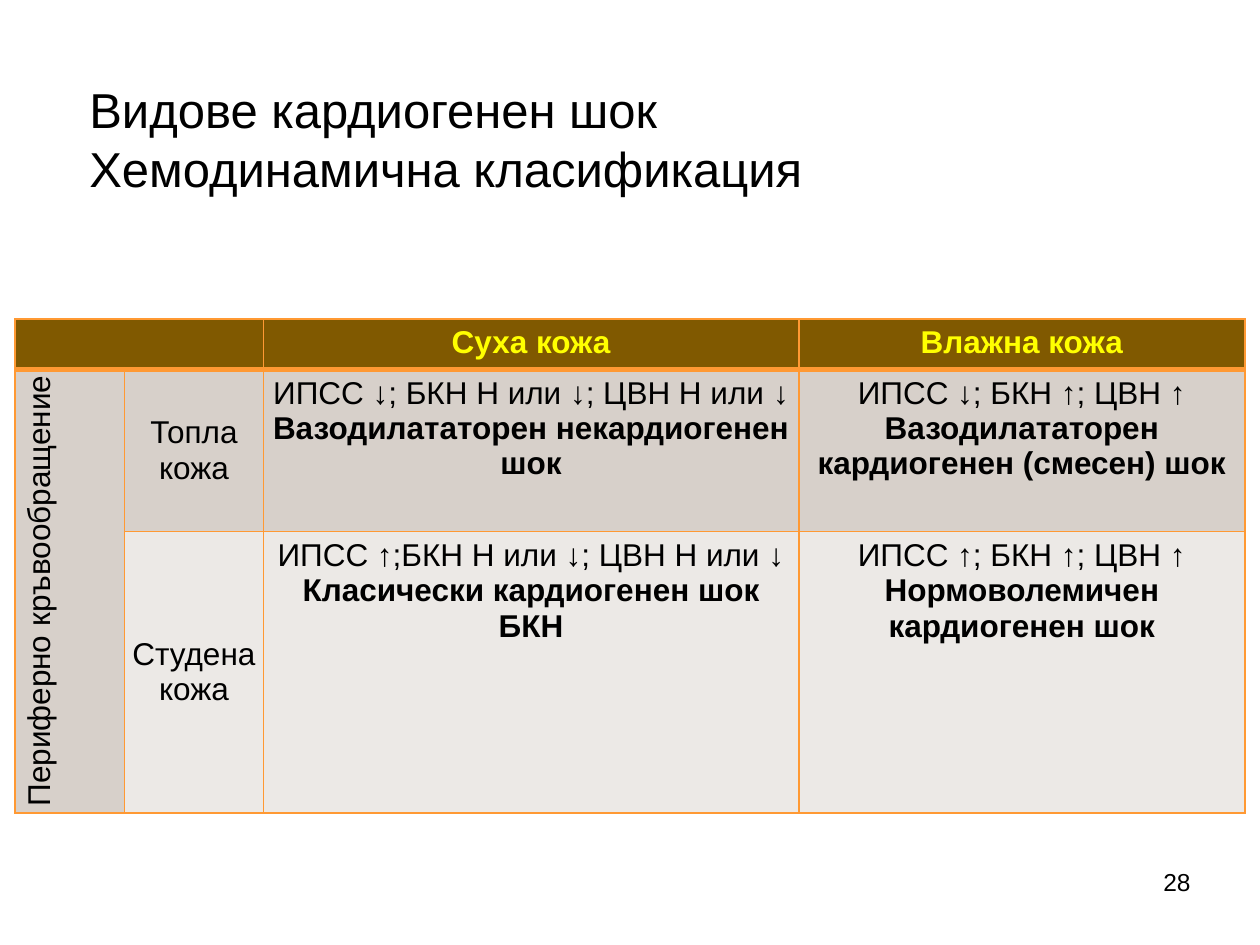
from lxml.etree import SubElement
from pptx import Presentation
from pptx.dml.color import RGBColor
from pptx.enum.text import MSO_ANCHOR as Anchor, PP_ALIGN as Align
from pptx.oxml.ns import qn
from pptx.util import Inches, Pt

BLACK = RGBColor(0x00, 0x00, 0x00)
YELLOW = RGBColor(0xFF, 0xFF, 0x00)
ORANGE = RGBColor(0xFF, 0x99, 0x33)
BROWN = RGBColor(0x80, 0x59, 0x00)
BEIGE = RGBColor(0xD7, 0xD0, 0xCA)
PALE = RGBColor(0xEC, 0xE9, 0xE6)

FONT = "Arial"
MARGIN = Inches(0.05)
COLUMNS = [0.87, 1.1, 4.25, 3.54]
ROWS = [0.38, 1.29, 2.23]
ROW_FILLS = [BROWN, BEIGE, PALE]

# Each cell is a list of paragraphs, each paragraph a list of (text, bold)
CELLS = {
    (0, 2): [[("Суха кожа", True)]],
    (0, 3): [[("Влажна кожа", True)]],
    (1, 0): [[("Периферно кръвообращение", False)]],
    (1, 1): [[("Топла кожа", False)]],
    (1, 2): [[("ИПСС ↓; БКН Н или ↓; ЦВН Н или ", False), ("↓", True)],
             [("Вазодилататорен некардиогенен шок", True)]],
    (1, 3): [[("ИПСС ↓; БКН ↑; ЦВН ↑", False)],
             [("Вазодилататорен кардиогенен (смесен) шок", True)]],
    (2, 1): [[("Студена кожа", False)]],
    (2, 2): [[("ИПСС ↑;БКН Н или ↓; ЦВН Н или ↓", False)],
             [("Класически кардиогенен шок", True)],
             [("БКН", True)]],
    (2, 3): [[("ИПСС ↑; БКН ↑; ЦВН ↑", False)],
             [("Нормоволемичен кардиогенен шок", True)]],
}


def style_font(font, size, color, bold=False):
    font.name = FONT
    font.size = Pt(size)
    font.bold = bold
    font.color.rgb = color


def set_margins(target):
    target.margin_left = target.margin_right = MARGIN
    target.margin_top = target.margin_bottom = MARGIN


def add_text(page, text, left, top, width, height, size,
             align=Align.LEFT, anchor=Anchor.TOP, wrap=True):
    box = page.shapes.add_textbox(Inches(left), Inches(top),
                                  Inches(width), Inches(height))
    frame = box.text_frame
    frame.word_wrap = wrap
    frame.vertical_anchor = anchor
    set_margins(frame)
    para = frame.paragraphs[0]
    para.text = text
    para.alignment = align
    for span in para.runs:
        style_font(span.font, size, BLACK)


def add_borders(cell, bottom_width):
    properties = cell._tc.get_or_add_tcPr()
    for side, width in (("L", 1), ("R", 1), ("T", 1), ("B", bottom_width)):
        line = SubElement(properties, qn(f"a:ln{side}"), w=str(Pt(width)))
        fill = SubElement(line, qn("a:solidFill"))
        SubElement(fill, qn("a:srgbClr"), val=str(ORANGE))


def fill_cell(cell, paragraphs, color):
    frame = cell.text_frame
    for index, spans in enumerate(paragraphs):
        para = frame.add_paragraph() if index else frame.paragraphs[0]
        para.alignment = Align.CENTER
        for text, bold in spans:
            span = para.add_run()
            span.text = text
            style_font(span.font, 18, color, bold)


def add_shock_table(page):
    frame = page.shapes.add_table(len(ROWS), len(COLUMNS),
                                  Inches(0.12), Inches(2.53),
                                  Inches(sum(COLUMNS)), Inches(sum(ROWS)))
    table = frame.table
    table.horz_banding = False
    for column, width in zip(table.columns, COLUMNS):
        column.width = Inches(width)
    for row, height in zip(table.rows, ROWS):
        row.height = Inches(height)

    for row, row_fill in enumerate(ROW_FILLS):
        for column in range(len(COLUMNS)):
            cell = table.cell(row, column)
            set_margins(cell)
            add_borders(cell, 1 if row else 3)
            cell.fill.solid()
            # The side heading keeps one colour over both rows
            cell.fill.fore_color.rgb = BEIGE if row and column == 0 else row_fill
            if row and column == 1:
                cell.vertical_anchor = Anchor.MIDDLE
            fill_cell(cell, CELLS.get((row, column), []),
                      BLACK if row else YELLOW)

    # Empty corner and rotated side heading
    table.cell(0, 0).merge(table.cell(0, 1))
    side = table.cell(1, 0)
    side.merge(table.cell(2, 0))
    side._tc.get_or_add_tcPr().set("vert", "vert270")


def main():
    deck = Presentation()
    deck.slide_width, deck.slide_height = Inches(10), Inches(7.5)
    page = deck.slides.add_slide(deck.slide_layouts[6])

    # Page number
    add_text(page, "28", 9.17, 6.83, 0.33, 0.32, 14,
             align=Align.RIGHT, wrap=False)
    add_shock_table(page)
    # Title
    add_text(page, "Видове кардиогенен шок\vХемодинамична класификация",
             0.66, 0.47, 9, 1.25, 28, anchor=Anchor.MIDDLE)
    deck.save("out.pptx")


if __name__ == "__main__":
    main()
